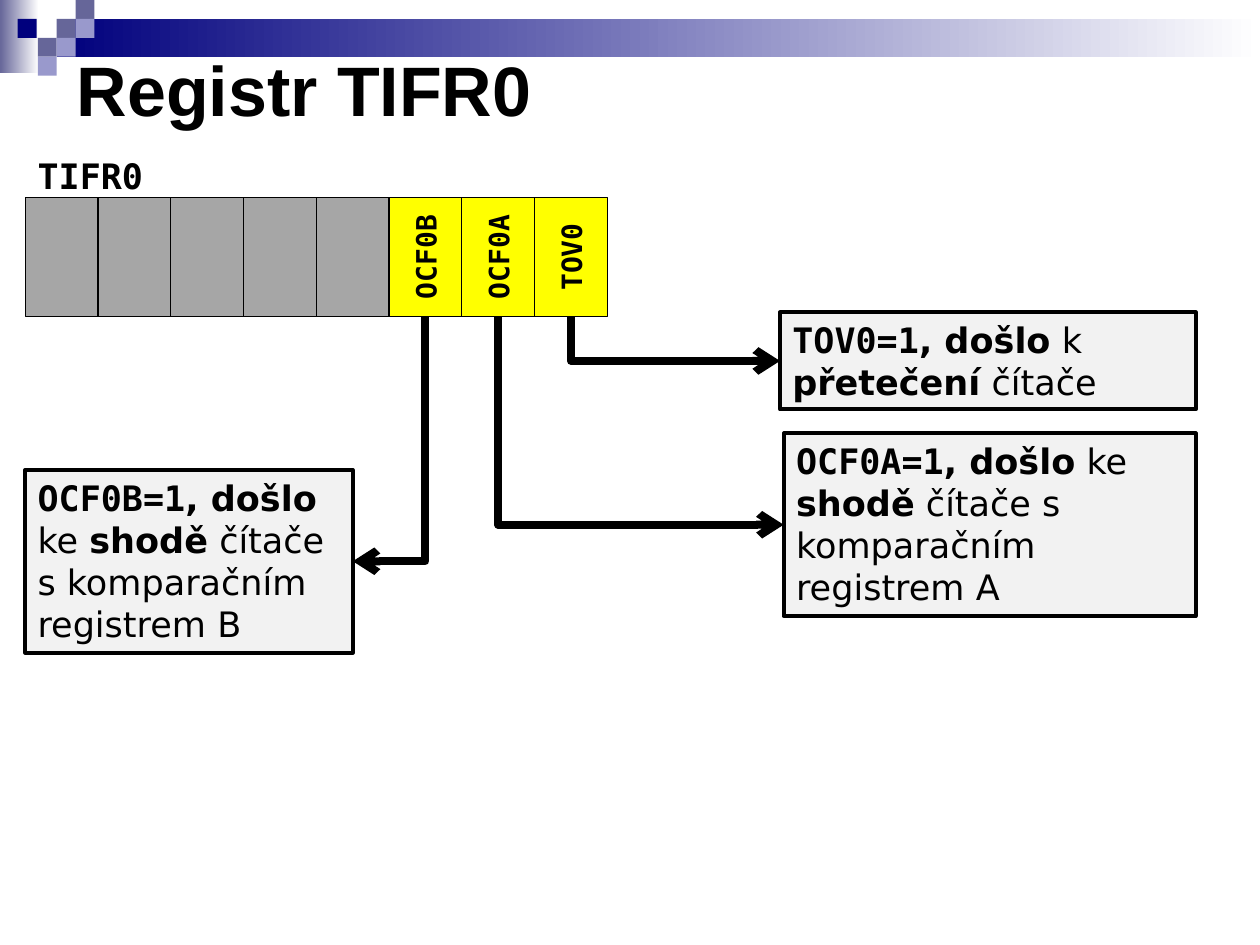
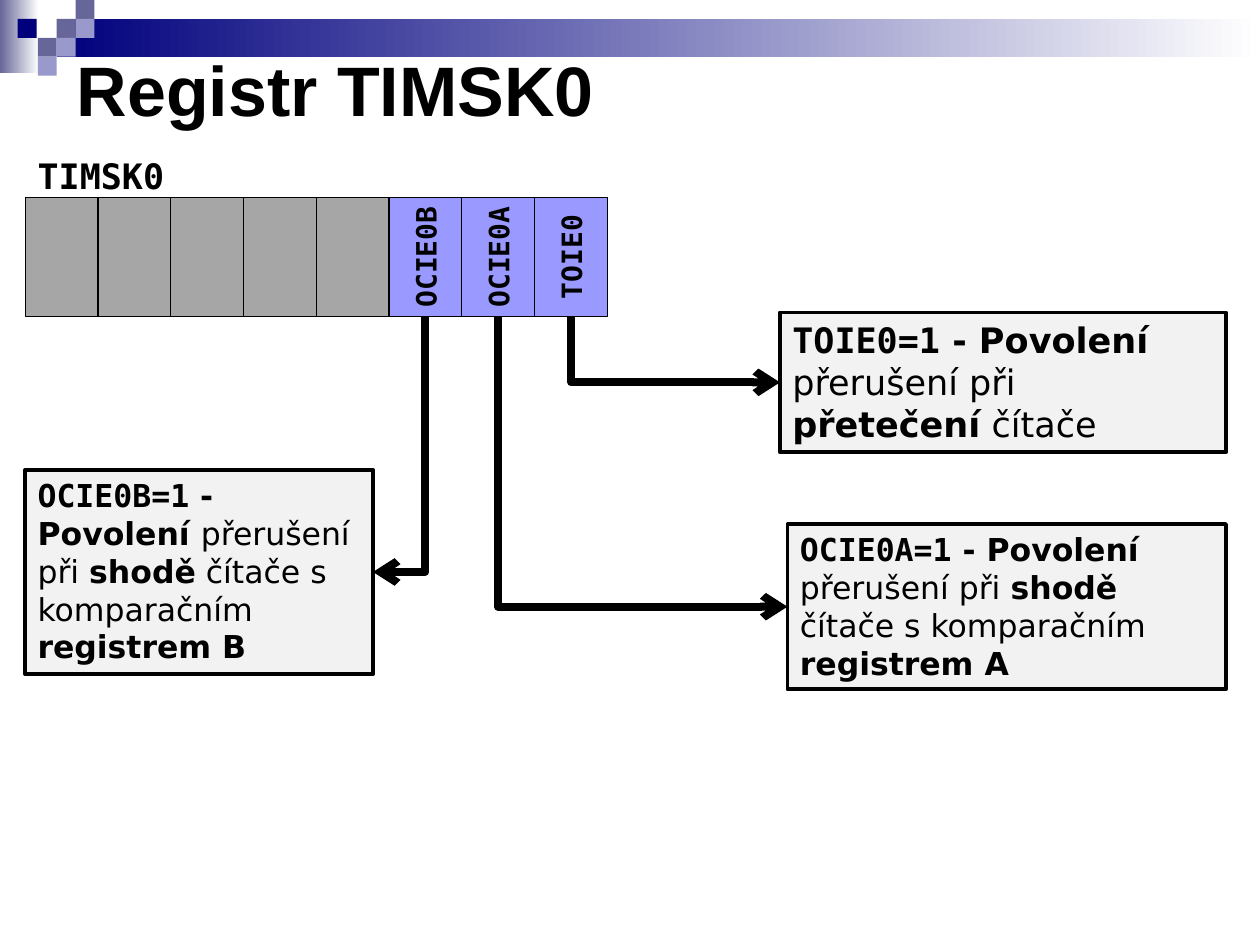
from dataclasses import dataclass
from lxml import etree
from pptx import Presentation, util as u
from pptx.dml.color import RGBColor
from pptx.enum import shapes, text
from pptx.oxml.ns import qn


@dataclass(frozen=True)
class Theme:
    black: str = "000000"
    white: str = "FFFFFF"
    navy: str = "00007D"
    slate: str = "666699"
    lilac: str = "9999CC"
    unused: str = "A6A6A6"
    flag: str = "FFFF00"
    mask: str = "9999FF"
    note: str = "F2F2F2"
    title_font: str = "Arial"
    sans: str = "DejaVu Sans"
    mono: str = "DejaVu Sans Mono"
    title_size: int = 40
    label_size: int = 20
    bit_size: int = 16


T = Theme()


def add_rect(parent, box, fill, line_width=None):
    sp = parent.add_shape(shapes.MSO_SHAPE.RECTANGLE, *map(u.Inches, box))
    sp.shadow.inherit = False
    if isinstance(fill, tuple):
        sp.fill.gradient()
        sp.fill.gradient_angle = 0
        for stop, color, position in zip(sp.fill.gradient_stops, fill, (0, 1)):
            stop.color.rgb = RGBColor.from_string(color)
            stop.position = position
    else:
        sp.fill.solid()
        sp.fill.fore_color.rgb = RGBColor.from_string(fill)
    if line_width:
        sp.line.color.rgb = RGBColor.from_string(T.black)
        sp.line.width = u.Pt(line_width)
    else:
        sp.line.fill.background()
    return sp


def set_font(p, size, name, bold=None):
    p.font.size = u.Pt(size)
    p.font.name = name
    p.font.bold = bold
    p.font.color.rgb = RGBColor.from_string(T.black)


prs = Presentation()
prs.slide_width, prs.slide_height = u.Inches(10), u.Inches(7.5)
layout = prs.slide_layouts[5]
title = layout.placeholders[0]
title.left, title.top, title.width, title.height = map(u.Inches, (0.51, 0.31, 8.86, 0.79))

SQUARE = 0.15
BAND = [
    ((0, 0, 0.31, 0.58), (T.slate, T.white)),
    ((0.45, 0.15, 9.55, 0.3), (T.navy, T.white)),
]
for x, y, color in [
    (0.45, 0.15, T.slate), (0.6, 0, T.slate), (0.6, 0.15, T.lilac), (0.3, 0.3, T.slate),
    (0.14, 0.15, T.navy), (0.45, 0.3, T.lilac), (0.3, 0.45, T.lilac),
]:
    BAND.append(((x, y, SQUARE, SQUARE), color))

BITS, ROW_LEFT, ROW_TOP, ROW_WIDTH, ROW_HEIGHT = 8, 0.2, 1.57, 4.62, 0.94
BIT_WIDTH = ROW_WIDTH / BITS

REGISTERS = [
    ("TIFR0", T.flag, {5: "OCF0B", 6: "OCF0A", 7: "TOV0"}, [
        (7, (6.19, 2.48, 3.3, 0.77), 20,
         ["TOV0=1", ", došlo", " k ", "přetečení", " čítače"]),
        (6, (6.22, 3.44, 3.27, 1.45), 20,
         ["OCF0A=1", ", došlo", " ke ", "shodě", " čítače s komparačním registrem A"]),
        (5, (0.2, 3.73, 2.6, 1.45), 20,
         ["OCF0B=1", ", došlo", " ke ", "shodě", " čítače s komparačním registrem B"]),
    ]),
    ("TIMSK0", T.mask, {5: "OCIE0B", 6: "OCIE0A", 7: "TOIE0"}, [
        (7, (6.19, 2.48, 3.54, 1.11), 20,
         ["TOIE0=1", " - Povolení", " přerušení při ", "přetečení", " čítače"]),
        (6, (6.25, 4.16, 3.48, 1.31), 18,
         ["OCIE0A=1", " - Povolení", " přerušení při ", "shodě",
          " čítače s komparačním ", "registrem A"]),
        (5, (0.2, 3.73, 2.76, 1.62), 18,
         ["OCIE0B=1", " - Povolení ", "přerušení při ", "shodě",
          " čítače s komparačním ", "registrem B"]),
    ]),
]

for number, (register, bit_color, bit_names, notes) in enumerate(REGISTERS):
    s = prs.slides.add_slide(layout)
    if number == 0:
        master_tree = prs.slide_master.shapes.element
        for index, (box, fill) in enumerate(BAND):
            master_tree.insert(2 + index, add_rect(s.shapes, box, fill).element)

    tf = s.shapes.title.text_frame
    tf.text = f"Registr {register}"
    tf.vertical_anchor = text.MSO_ANCHOR.MIDDLE
    tf.auto_size = text.MSO_AUTO_SIZE.NONE
    p = tf.paragraphs[0]
    p.alignment = text.PP_ALIGN.LEFT
    set_font(p, T.title_size, T.title_font, True)

    row = s.shapes.add_group_shape()
    cells = []
    for bit in range(BITS):
        box = (ROW_LEFT + bit * BIT_WIDTH, ROW_TOP, BIT_WIDTH, ROW_HEIGHT)
        cell = add_rect(row.shapes, box, bit_color if bit in bit_names else T.unused, 0.75)
        cells.append(cell)
        if bit in bit_names:
            tf = cell.text_frame
            tf.text = bit_names[bit]
            tf.word_wrap = False
            tf.vertical_anchor = text.MSO_ANCHOR.MIDDLE
            cell.element.txBody.bodyPr.set("vert", "vert270")
            p = tf.paragraphs[0]
            p.alignment = text.PP_ALIGN.CENTER
            set_font(p, T.bit_size, T.mono, True)

    tf = s.shapes.add_textbox(*map(u.Inches, (ROW_LEFT, 1.18, 2.03, 0.44))).text_frame
    tf.word_wrap = True
    tf.auto_size = text.MSO_AUTO_SIZE.SHAPE_TO_FIT_TEXT
    tf.text = register
    set_font(tf.paragraphs[0], T.label_size, T.mono, True)

    for bit, box, size, runs in notes:
        note = add_rect(s.shapes, box, T.note, 2.25)
        tf = note.text_frame
        tf.word_wrap = True
        tf.auto_size = text.MSO_AUTO_SIZE.SHAPE_TO_FIT_TEXT
        tf.vertical_anchor = text.MSO_ANCHOR.TOP
        p = tf.paragraphs[0]
        p.alignment = text.PP_ALIGN.LEFT
        p.space_after = u.Pt(18)
        set_font(p, size, T.sans)
        for index, words in enumerate(runs):
            r = p.add_run()
            r.text = words
            r.font.bold = index == 0 or index % 2 == 1
            if index == 0:
                r.font.name = T.mono

        left, top, width, height = box
        to_right = left > ROW_LEFT + ROW_WIDTH
        start_x, start_y = ROW_LEFT + (bit + 0.5) * BIT_WIDTH, ROW_TOP + ROW_HEIGHT
        end_x, end_y = left if to_right else left + width, top + height / 2
        cxn = s.shapes.add_connector(
            shapes.MSO_CONNECTOR.ELBOW, *map(u.Inches, (start_x, start_y, end_x, end_y)))
        cxn.begin_connect(cells[bit], 2)
        cxn.end_connect(note, 1 if to_right else 3)
        drop, reach = end_y - start_y, abs(end_x - start_x)
        cxn.left = u.Inches((start_x + end_x - drop) / 2)
        cxn.top = u.Inches((start_y + end_y - reach) / 2)
        cxn.width, cxn.height = u.Inches(drop), u.Inches(reach)
        spPr = cxn.element.spPr
        xfrm = spPr.find(qn("a:xfrm"))
        xfrm.set("rot", str((270 if to_right else 90) * 60000))
        xfrm.set("flipH", "1" if to_right else "0")
        xfrm.set("flipV", "0")
        spPr.find(qn("a:prstGeom")).set("prst", "bentConnector2")
        cxn.line.color.rgb = RGBColor.from_string(T.black)
        cxn.line.width = u.Pt(4.5)
        etree.SubElement(spPr.find(qn("a:ln")), qn("a:tailEnd"), type="arrow")
        etree.SubElement(spPr, qn("a:effectLst"))

prs.save("out.pptx")
